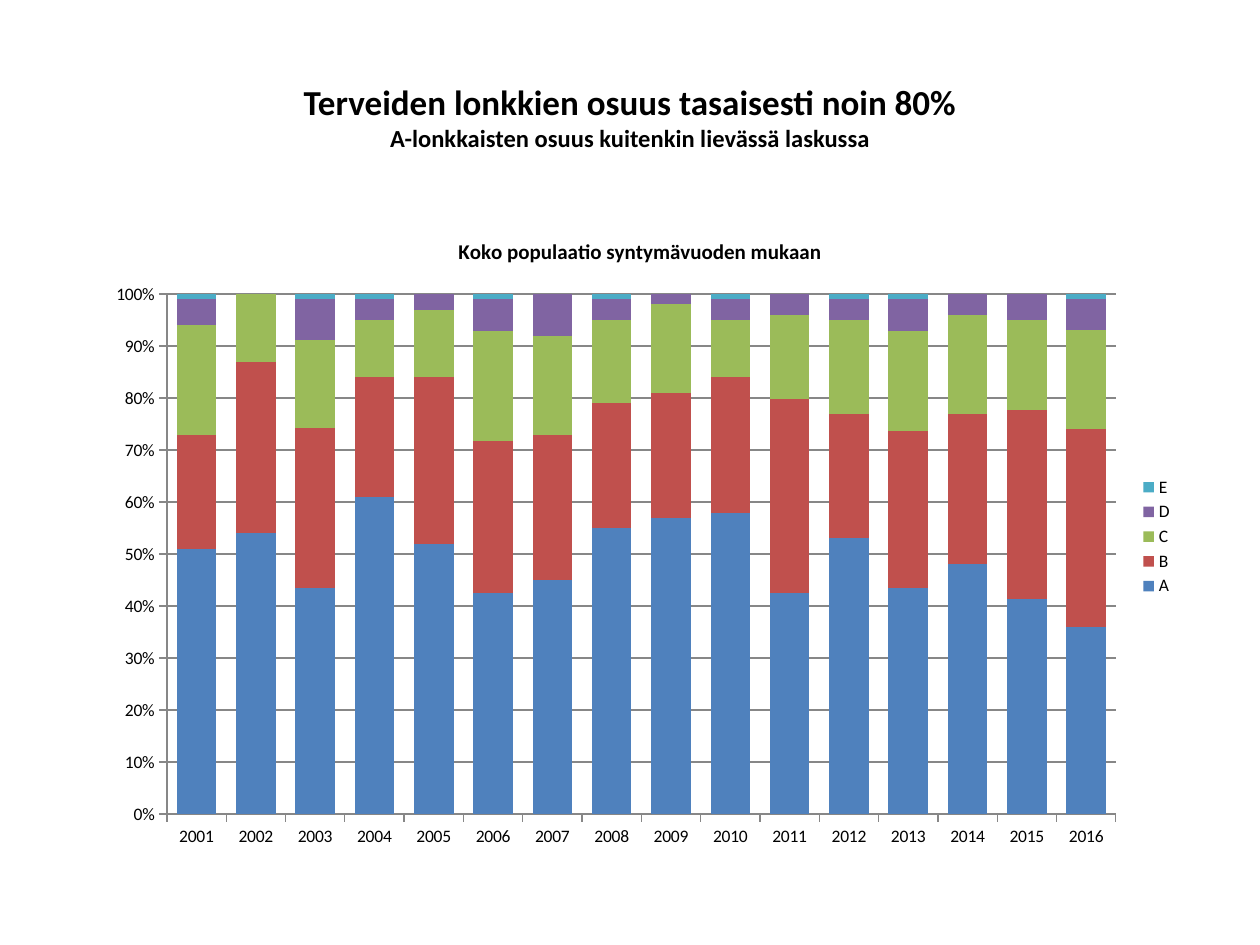
"""Build a slide showing hip grade shares by birth year."""
import pptx
import pptx.chart.data
import pptx.dml.color
import pptx.enum.chart
import pptx.enum.text
import pptx.util

Pt = pptx.util.Pt

COLORS = {
    "text": "000000",
    "grid": "878787",
    "A": "4F81BD",
    "B": "C0504D",
    "C": "9BBB59",
    "D": "8064A2",
    "E": "4BACC6",
}
YEARS = [str(year) for year in range(2001, 2017)]
GRADES = {
    "A": [51, 54, 44, 61, 52, 42, 45, 55, 57, 58, 42, 53, 43, 48, 41, 36],
    "B": [22, 33, 31, 23, 32, 29, 28, 24, 24, 26, 37, 24, 30, 29, 36, 38],
    "C": [21, 13, 17, 11, 13, 21, 19, 16, 17, 11, 16, 18, 19, 19, 17, 19],
    "D": [5, 0, 8, 4, 3, 6, 8, 4, 2, 4, 4, 4, 6, 4, 5, 6],
    "E": [1, 0, 1, 1, 0, 1, 0, 1, 0, 1, 0, 1, 1, 0, 0, 1],
}


class SlideBuilder:
    """Hold the style and the current slide."""

    font_name = "Calibri"

    def __init__(self, slide):
        self.slide = slide

    def color(self, name):
        return pptx.dml.color.RGBColor.from_string(COLORS[name])

    def style_font(self, font, size, bold=False):
        font.name = self.font_name
        font.size = Pt(size)
        font.bold = bold
        font.color.rgb = self.color("text")

    def title(self, headline, subtitle, left, top, width, height):
        title = self.slide.shapes.title
        title.left, title.top = Pt(left), Pt(top)
        title.width, title.height = Pt(width), Pt(height)
        title.text_frame.vertical_anchor = pptx.enum.text.MSO_ANCHOR.MIDDLE
        paragraph = title.text_frame.paragraphs[0]
        paragraph.alignment = pptx.enum.text.PP_ALIGN.CENTER
        self.style_font(paragraph.font, 20, bold=True)
        for text, size in ((headline, 20), (subtitle, 14)):
            if paragraph.runs:
                paragraph.add_line_break()
            run = paragraph.add_run()
            run.text = text
            self.style_font(run.font, size, bold=True)

    def stacked_chart(self, heading, categories, series, left, top, width, height):
        data = pptx.chart.data.CategoryChartData()
        data.categories = categories
        for name, values in series.items():
            data.add_series(name, values)
        chart = self.slide.shapes.add_chart(
            pptx.enum.chart.XL_CHART_TYPE.COLUMN_STACKED_100,
            Pt(left), Pt(top), Pt(width), Pt(height), data,
        ).chart
        self.style_font(chart.font, 10)

        chart.has_title = True
        chart.chart_title.text_frame.text = heading
        heading_paragraph = chart.chart_title.text_frame.paragraphs[0]
        self.style_font(heading_paragraph.font, 12, bold=True)

        chart.has_legend = True
        chart.legend.position = pptx.enum.chart.XL_LEGEND_POSITION.RIGHT
        chart.legend.include_in_layout = False

        plot = chart.plots[0]
        plot.gap_width, plot.overlap = 50, 100
        plot.vary_by_categories = False
        for grade in plot.series:
            grade.format.fill.solid()
            grade.format.fill.fore_color.rgb = self.color(grade.name)

        shares = chart.value_axis
        shares.has_major_gridlines = True
        shares.minimum_scale, shares.maximum_scale, shares.major_unit = 0, 1, 0.1
        shares.tick_labels.number_format = "0%"
        shares.tick_labels.number_format_is_linked = False
        for axis in (chart.category_axis, shares):
            axis.major_tick_mark = pptx.enum.chart.XL_TICK_MARK.OUTSIDE
        for part in (chart.category_axis, shares, shares.major_gridlines):
            part.format.line.color.rgb = self.color("grid")
            part.format.line.width = Pt(0.75)


def main():
    presentation = pptx.Presentation()
    presentation.slide_width, presentation.slide_height = Pt(720), Pt(540)
    title_only = presentation.slide_layouts[5]
    builder = SlideBuilder(presentation.slides.add_slide(title_only))
    builder.title(
        "Terveiden lonkkien osuus tasaisesti noin 80%",
        "A-lonkkaisten osuus kuitenkin lievässä laskussa",
        36, 21.6, 648, 90,
    )
    builder.stacked_chart(
        "Koko populaatio syntymävuoden mukaan", YEARS, GRADES,
        54, 122.4, 623.5, 368.6,
    )
    presentation.save("out.pptx")


if __name__ == "__main__":
    main()
